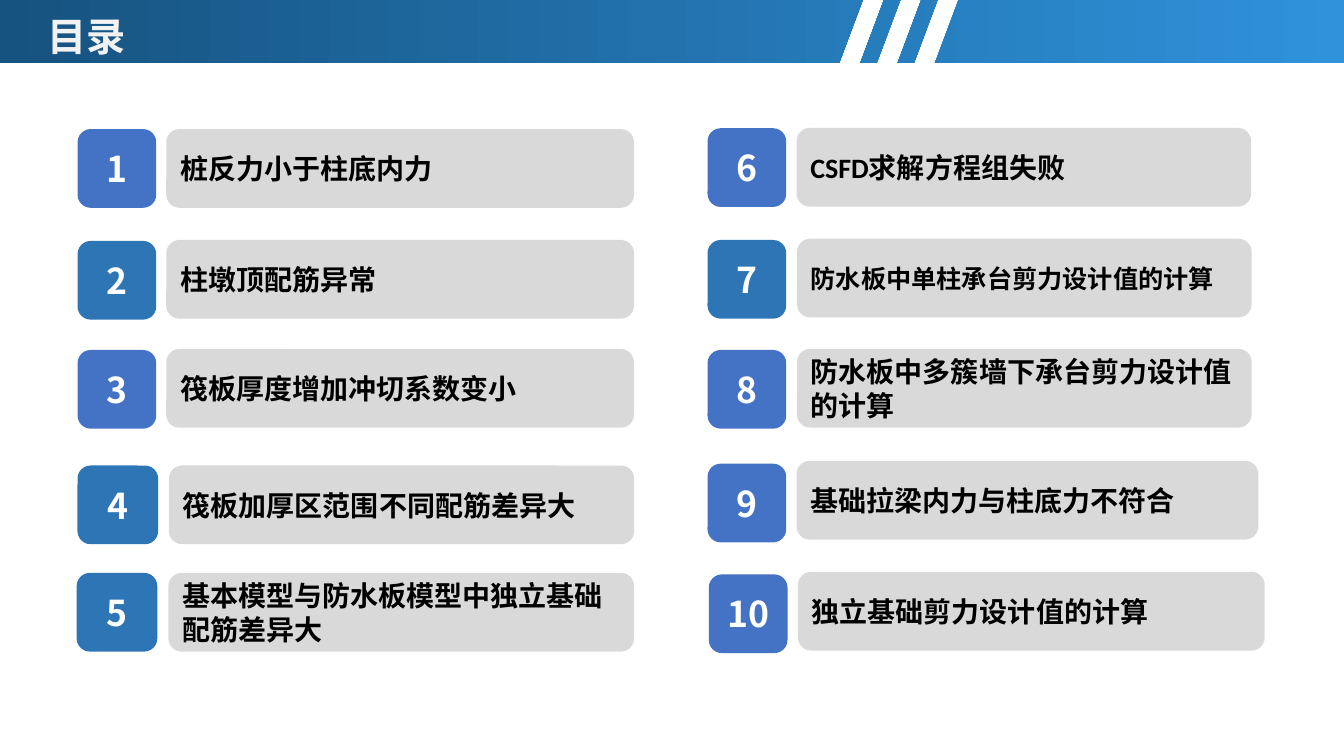
"""Build a table-of-contents slide with ten numbered entries in two columns."""
from dataclasses import dataclass

from lxml.etree import SubElement
from pptx import Presentation
from pptx.dml.color import RGBColor
from pptx.enum.shapes import MSO_SHAPE
from pptx.enum.text import MSO_ANCHOR, PP_ALIGN
from pptx.oxml.ns import qn
from pptx.slide import Slide
from pptx.text.text import TextFrame
from pptx.util import Pt

INDIGO = RGBColor(0x44, 0x72, 0xC4)
BLUE = RGBColor(0x2E, 0x75, 0xB6)
GREY = RGBColor(0xD9, 0xD9, 0xD9)
WHITE = RGBColor(0xFF, 0xFF, 0xFF)
BLACK = RGBColor(0x00, 0x00, 0x00)
TITLE_GREY = RGBColor(0xF2, 0xF2, 0xF2)
BANNER_LIGHT = RGBColor(0x2F, 0x92, 0xDB)
BANNER_DARK = RGBColor(0x16, 0x53, 0x80)

LATIN = "Calibri"
CJK = "Noto Sans CJK SC"
SLIDE_W, SLIDE_H = 960, 540
BANNER_H = 45.4
SLANT = 17
BOX_H = 56.2


@dataclass(frozen=True)
class Entry:
    """One numbered entry, with its badge and bar placed in points."""
    lines: tuple[str, ...]
    color: RGBColor
    badge_x: float
    badge_y: float
    bar_x: float
    bar_y: float
    bar_w: float
    badge_w: float = 56.2
    size: float = 20


ENTRIES = (
    Entry(("桩反力小于柱底内力",), INDIGO, 55.4, 92.2, 118.8, 92.2, 334.1),
    Entry(("柱墩顶配筋异常",), BLUE, 55.4, 172.1, 118.8, 171.4, 334.1),
    Entry(("筏板厚度增加冲切系数变小",), INDIGO, 55.4, 250, 118.8, 249.3, 334.1),
    Entry(("筏板加厚区范围不同配筋差异大",), BLUE, 55.4, 332.5, 120.7, 332.5, 332.3, 57.6),
    Entry(("基本模型与防水板模型中独立基础配筋差异大",), BLUE, 54.8, 409.2, 120.3, 409.2, 332.6, 57.6),
    Entry(("CSFD求解方程组失败",), INDIGO, 505.4, 91.6, 569, 91.4, 324.7),
    Entry(("防水板中单柱承台剪力设计值的计算",), BLUE, 505.4, 171.4, 569.3, 170.5, 324.7, size=18),
    Entry(("防水板中多簇墙下承台剪力设计值", "的计算"), INDIGO, 505.4, 250, 569.3, 249.2, 324.7),
    Entry(("基础拉梁内力与柱底力不符合",), INDIGO, 505.4, 331.2, 569, 329.2, 329.8),
    Entry(("独立基础剪力设计值的计算",), INDIGO, 506.3, 410.3, 570, 408.5, 333.4),
)


def write(tf: TextFrame, lines: tuple[str, ...], size: float, color: RGBColor,
          latin: str = LATIN, align: PP_ALIGN = PP_ALIGN.LEFT) -> None:
    """Write bold lines, one paragraph each."""
    tf.word_wrap = True
    tf.text = "\n".join(lines)
    for p in tf.paragraphs:
        p.alignment = align
        p.font.size = Pt(size)
        p.font.bold = True
        p.font.color.rgb = color
        p.font.name = latin
        SubElement(p._p.pPr.find(qn("a:defRPr")), qn("a:ea"), typeface=CJK)


def add_box(s: Slide, x: float, y: float, w: float, fill: RGBColor) -> TextFrame:
    """Draw a rounded box and return its text frame."""
    sp = s.shapes.add_shape(MSO_SHAPE.ROUNDED_RECTANGLE, Pt(x), Pt(y), Pt(w), Pt(BOX_H))
    sp.shadow.inherit = False
    sp.fill.solid()
    sp.fill.fore_color.rgb = fill
    sp.line.fill.background()
    sp.text_frame.vertical_anchor = MSO_ANCHOR.MIDDLE
    return sp.text_frame


def add_banner(s: Slide) -> None:
    """Draw the gradient banner, cut by slanted gaps."""
    stripes = [(x, x + 11.7, x - SLANT, x + 11.7 - SLANT) for x in (631.4, 658)]
    bands = [(0, 616.3, 0, 616.3 - SLANT), *stripes,
             (684.7, SLIDE_W, 684.7 - SLANT, SLIDE_W)]
    builder = s.shapes.build_freeform(Pt(0), Pt(0))
    for top_l, top_r, low_l, low_r in bands:
        if top_l:
            builder.move_to(Pt(top_l), Pt(0))
        builder.add_line_segments(
            [(Pt(top_r), Pt(0)), (Pt(low_r), Pt(BANNER_H)), (Pt(low_l), Pt(BANNER_H))])
    sp = builder.convert_to_shape()
    sp.shadow.inherit = False
    sp.line.fill.background()
    sp.fill.gradient()
    sp.fill.gradient_angle = 180
    for stop, position, color in zip(sp.fill.gradient_stops, (0, 1), (BANNER_LIGHT, BANNER_DARK)):
        stop.position = position
        stop.color.rgb = color


def add_entry(s: Slide, number: int, entry: Entry) -> None:
    """Draw the badge and bar of one entry."""
    badge = add_box(s, entry.badge_x, entry.badge_y, entry.badge_w, entry.color)
    write(badge, (str(number),), 25.4, WHITE, CJK, PP_ALIGN.CENTER)
    bar = add_box(s, entry.bar_x, entry.bar_y, entry.bar_w, GREY)
    write(bar, entry.lines, entry.size, BLACK)


def main() -> None:
    """Build and save the slide."""
    prs = Presentation()
    prs.slide_width, prs.slide_height = Pt(SLIDE_W), Pt(SLIDE_H)
    s = prs.slides.add_slide(prs.slide_layouts[6])
    add_banner(s)
    title = s.shapes.add_textbox(Pt(26.6), Pt(5), Pt(374.4), Pt(41))
    write(title.text_frame, ("目录",), 28, TITLE_GREY)
    for number, entry in enumerate(ENTRIES, 1):
        add_entry(s, number, entry)
    prs.save("out.pptx")


if __name__ == "__main__":
    main()
